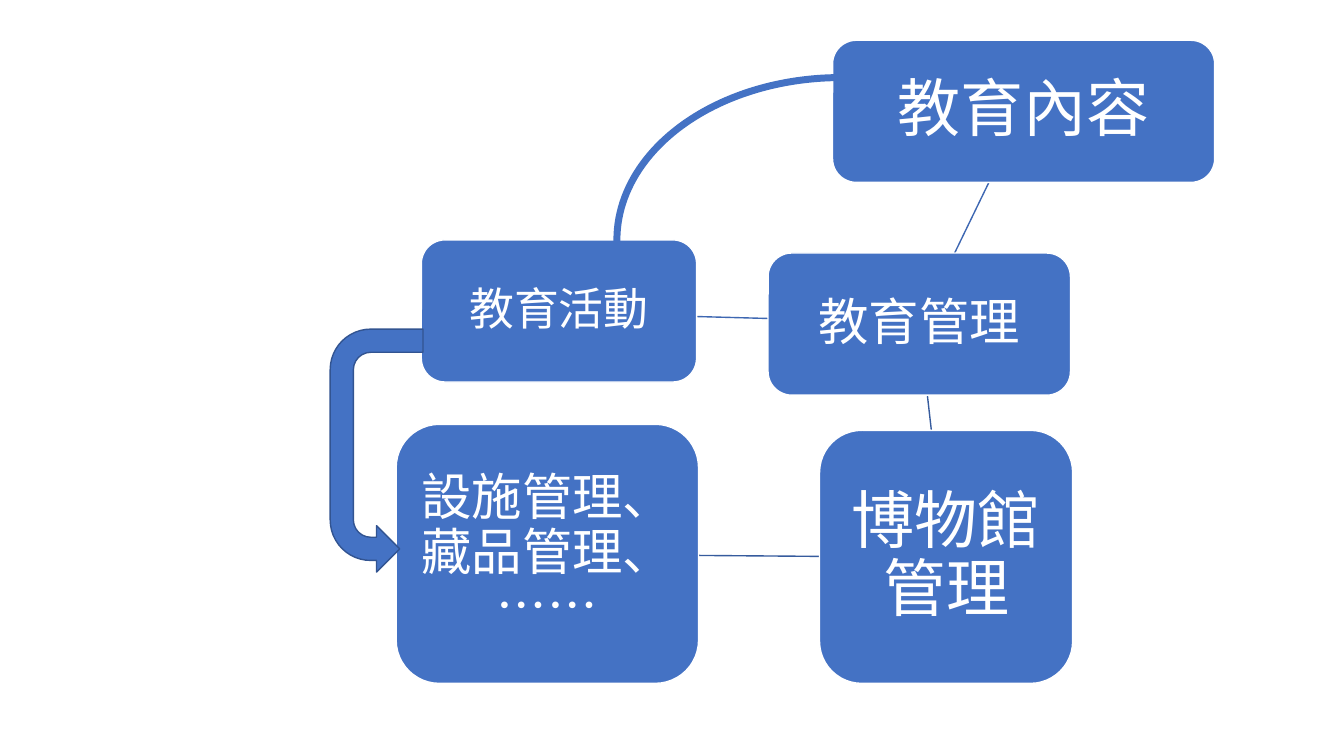
import pptx
import pptx.util
import pptx.dml.color
import pptx.enum.shapes
import pptx.enum.text
import pptx.oxml.ns
import lxml.etree

RGB = pptx.dml.color.RGBColor
Pt = pptx.util.Pt
Kind = pptx.enum.shapes.MSO_SHAPE
BLUE = RGB(0x44, 0x72, 0xC4)
MID = RGB(0x3E, 0x67, 0xB2)
DEEP = RGB(0x36, 0x5B, 0x9D)
EDGE = RGB(0x32, 0x54, 0x91)
WHITE = RGB(0xFF, 0xFF, 0xFF)

deck = pptx.Presentation()
deck.slide_width = pptx.util.Inches(13.33)
deck.slide_height = pptx.util.Inches(7.5)
slide = deck.slides.add_slide(deck.slide_layouts[6])


def place(*shares):
    """Turn percent shares, across and down in turn, into slide lengths."""
    sides = (deck.slide_width, deck.slide_height)
    return [round(sides[i % 2] * s / 100) for i, s in enumerate(shares)]


def draw(kind, spot, line, width, fill=None):
    """Add a flat preset shape with the given outline and fill."""
    shape = slide.shapes.add_shape(kind, *place(*spot))
    shape.shadow.inherit = False
    shape.line.color.rgb = line
    shape.line.width = Pt(width)
    if fill is None:
        shape.fill.background()
    else:
        shape.fill.solid()
        shape.fill.fore_color.rgb = fill
    return shape


# Thin links between the boxes
links = [
    ((60.98, 73.6, 51.98, 73.47), DEEP),
    ((69.3, 56.93, 69, 52.27), DEEP),
    ((57.15, 42.13, 51.83, 41.87), MID),
    ((71.03, 33.47, 73.58, 24.13), MID),
]
for ends, tint in links:
    link = slide.shapes.add_connector(
        pptx.enum.shapes.MSO_CONNECTOR.STRAIGHT, *place(*ends))
    link.line.color.rgb = tint
    link.line.width = Pt(1)
    lxml.etree.SubElement(link.element.spPr, pptx.oxml.ns.qn("a:effectLst"))

# Rounded boxes: text, place, text size, inset
ROW = 18.8
boxes = [
    ("博物館管理", (60.98, 56.93, 18.83, 33.47), 45, 0.12),
    ("教育管理", (57.15, 33.47, 22.5, ROW), 36, 0.1),
    ("教育活動", (31.35, 31.73, 20.48, ROW), 32, 0.09),
    ("教育內容", (61.95, 5.33, 28.43, ROW), 45, 0.12),
    ("設施管理、\v藏品管理、\v⋯⋯", (29.48, 56.13, 22.5, 34.27), 36, 0.1),
]
for words, spot, size, inset in boxes:
    frame = draw(Kind.ROUNDED_RECTANGLE, spot, WHITE, 1, BLUE).text_frame
    gap = pptx.util.Inches(inset)
    look = {
        "word_wrap": True,
        "vertical_anchor": pptx.enum.text.MSO_ANCHOR.MIDDLE,
        "margin_left": gap, "margin_right": gap,
        "margin_top": gap, "margin_bottom": gap,
    }
    for name, value in look.items():
        setattr(frame, name, value)
    para = frame.paragraphs[0]
    para.text = words
    form = {
        "alignment": pptx.enum.text.PP_ALIGN.CENTER,
        "line_spacing": 0.9,
        "space_after": Pt(size * 0.35),
    }
    for name, value in form.items():
        setattr(para, name, value)
    for run in para.runs:
        run.font.name = "Arial"
        run.font.size = Pt(size)
        run.font.color.rgb = WHITE

# U-turn arrow from the activities down to the facilities
turn = draw(Kind.U_TURN_ARROW, (18.98, 53.47, 18.08, 12.27), EDGE, 1, BLUE)
turn.rotation = 90

# Thick arc from the activities up to the content
arc = draw(Kind.ARC, (45.9, 10.27, 33.3, 42.93), BLUE, 5)
arc.adjustments[0] = 162
arc.adjustments[1] = 0.353

# Mirror both curved shapes
for shape, flip in ((turn, "flipV"), (arc, "flipH")):
    shape.element.spPr.find(pptx.oxml.ns.qn("a:xfrm")).set(flip, "1")

deck.save("out.pptx")
